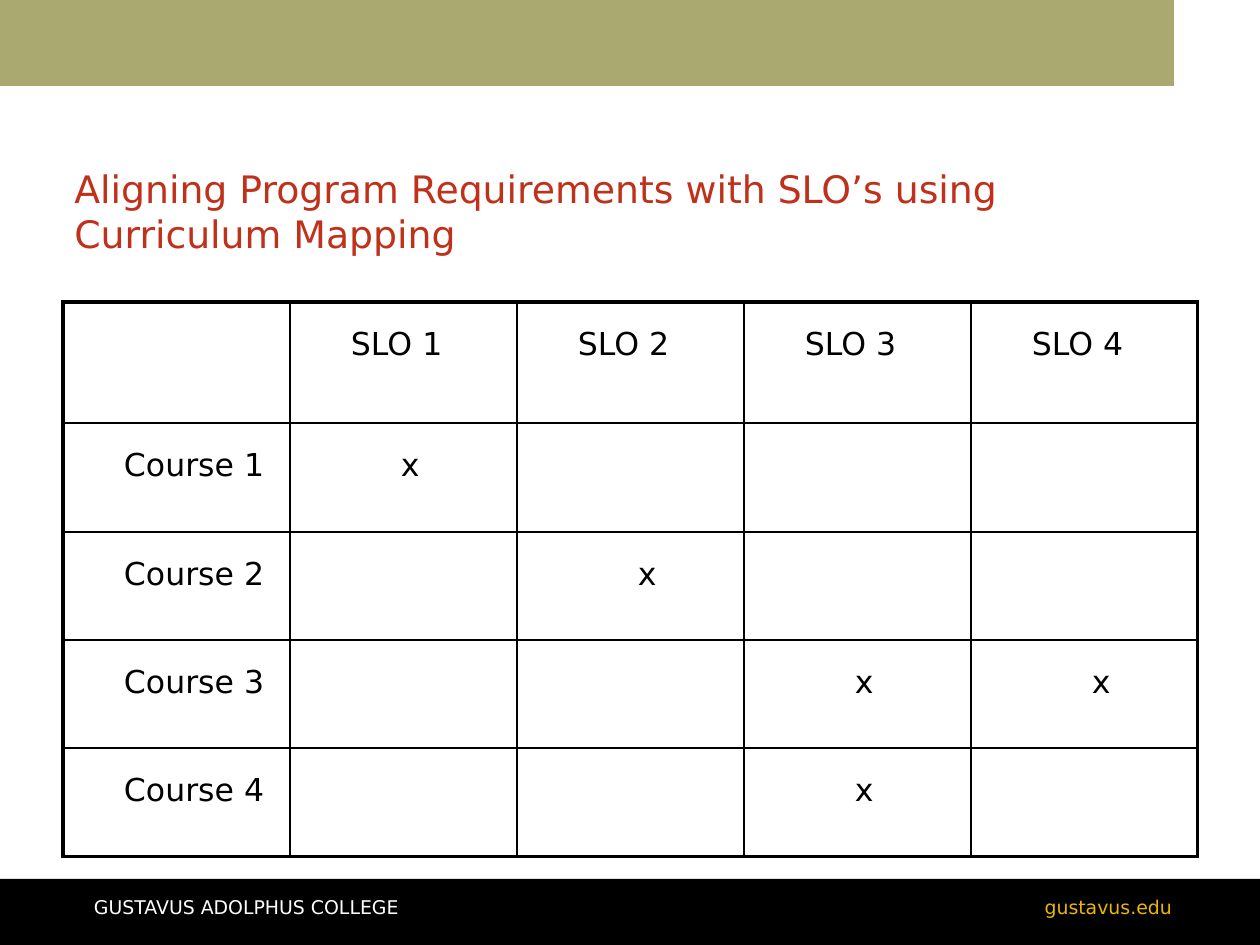
import pptx
import pptx.dml.color
import pptx.enum.shapes
import pptx.enum.text
import pptx.oxml
import pptx.oxml.ns
import pptx.util

PX = 8063.5
FONT = "DejaVu Sans"
OLIVE = pptx.dml.color.RGBColor(0xAA, 0xAA, 0x70)
BLACK = pptx.dml.color.RGBColor(0, 0, 0)
WHITE = pptx.dml.color.RGBColor(255, 255, 255)
GOLD = pptx.dml.color.RGBColor(0xEB, 0xB7, 0x00)
RED = pptx.dml.color.RGBColor(0xBF, 0x31, 0x1A)

COLUMNS = ["SLO 1", "SLO 2", "SLO 3", "SLO 4"]
ROWS = ["Course 1", "Course 2", "Course 3", "Course 4"]
MARK_INDENTS = {(1, 1): 100, (2, 2): 110, (3, 3): 100, (3, 4): 110, (4, 3): 100}
ROW_HEIGHTS = [121, 109, 108, 108, 109]
CELL_INSET, LABEL_INDENT = 11, 50
THIN, THICK = 1, 2.25


def px(n):
    """Turn pixels into EMU."""
    return pptx.util.Emu(round(n * PX))


def emu_box(box):
    """Turn a pixel box into EMU lengths."""
    return [px(n) for n in box]


def style_text(p, size, color):
    """Format the runs of a paragraph."""
    for r in p.runs:
        r.font.name = FONT
        r.font.size = pptx.util.Pt(size)
        r.font.color.rgb = color


def add_bar(slide, box, color):
    """Draw a plain filled bar."""
    sp = slide.shapes.add_shape(pptx.enum.shapes.MSO_SHAPE.RECTANGLE, *emu_box(box))
    sp.shadow.inherit = False
    sp.fill.solid()
    sp.fill.fore_color.rgb = color
    sp.line.fill.background()


def add_label(slide, box, text, color, align):
    """Write one footer label without insets."""
    tf = slide.shapes.add_textbox(*emu_box(box)).text_frame
    tf.word_wrap = True
    tf.margin_left = tf.margin_top = tf.margin_right = tf.margin_bottom = 0
    p = tf.paragraphs[0]
    p.text = text
    p.alignment = align
    p.line_spacing = 0.9
    style_text(p, 12, color)


def add_footer(slide, box):
    """Draw the footer bar with its two labels."""
    left, top, width, height = box
    add_bar(slide, box, BLACK)
    align = pptx.enum.text.PP_ALIGN
    add_label(slide, (left + 94, top + 19, 567, 29),
              "GUSTAVUS ADOLPHUS COLLEGE", WHITE, align.LEFT)
    add_label(slide, (left + width - 646, top + 19, 558, 29),
              "gustavus.edu", GOLD, align.RIGHT)


def set_title(slide, box, text):
    """Place and format the title placeholder."""
    sp = slide.shapes.title
    sp.left, sp.top, sp.width, sp.height = emu_box(box)
    tf = sp.text_frame
    tf.text = text
    tf.word_wrap = True
    tf.auto_size = pptx.enum.text.MSO_AUTO_SIZE.NONE
    tf.vertical_anchor = pptx.enum.text.MSO_ANCHOR.BOTTOM
    tf.paragraphs[0].alignment = pptx.enum.text.PP_ALIGN.LEFT
    style_text(tf.paragraphs[0], 24, RED)


def set_borders(cell, widths):
    """Give a cell black left, right, top and bottom borders."""
    tc_pr = cell._tc.get_or_add_tcPr()
    for i, (side, width) in enumerate(zip("LRTB", widths)):
        tc_pr.insert(i, pptx.oxml.parse_xml(
            f'<a:ln{side} {pptx.oxml.ns.nsdecls("a")} w="{pptx.util.Pt(width)}">'
            f'<a:solidFill><a:srgbClr val="{BLACK}"/></a:solidFill></a:ln{side}>'))


def cell_content(row, col):
    """Return the text and indent of a cell."""
    if (row, col) in MARK_INDENTS:
        return "x", MARK_INDENTS[row, col]
    if row == 0 and col > 0:
        return COLUMNS[col - 1], LABEL_INDENT
    if col == 0 and row > 0:
        return ROWS[row - 1], LABEL_INDENT
    return "", 0


def add_curriculum_map(slide, box):
    """Draw the table of courses against learning outcomes."""
    n_rows, n_cols = len(ROWS) + 1, len(COLUMNS) + 1
    table = slide.shapes.add_table(n_rows, n_cols, *emu_box(box)).table
    table.first_row = table.horz_banding = False
    for column in table.columns:
        column.width = px(box[2] / n_cols)
    for row, height in zip(table.rows, ROW_HEIGHTS):
        row.height = px(height)
    for i in range(n_rows):
        for j in range(n_cols):
            cell = table.cell(i, j)
            cell.fill.background()
            edges = (j == 0, j == n_cols - 1, i == 0, i == n_rows - 1)
            set_borders(cell, [THICK if edge else THIN for edge in edges])
            text, indent = cell_content(i, j)
            if text:
                cell.margin_left = px(CELL_INSET + indent)
                p = cell.text_frame.paragraphs[0]
                p.text = text
                p.line_spacing = 1.5
                style_text(p, 20, BLACK)


def main():
    """Build the slide and save it."""
    prs = pptx.Presentation()
    prs.slide_width, prs.slide_height = px(1260), px(945)
    slide = prs.slides.add_slide(prs.slide_layouts.get_by_name("Title Only"))
    add_bar(slide, (0, 0, 1174, 86), OLIVE)
    add_footer(slide, (0, 879, 1260, 66))
    set_title(slide, (63, 104, 1134, 158),
              "Aligning Program Requirements with SLO’s using Curriculum Mapping")
    add_curriculum_map(slide, (63, 302, 1135, sum(ROW_HEIGHTS)))
    prs.save("out.pptx")


if __name__ == "__main__":
    main()
